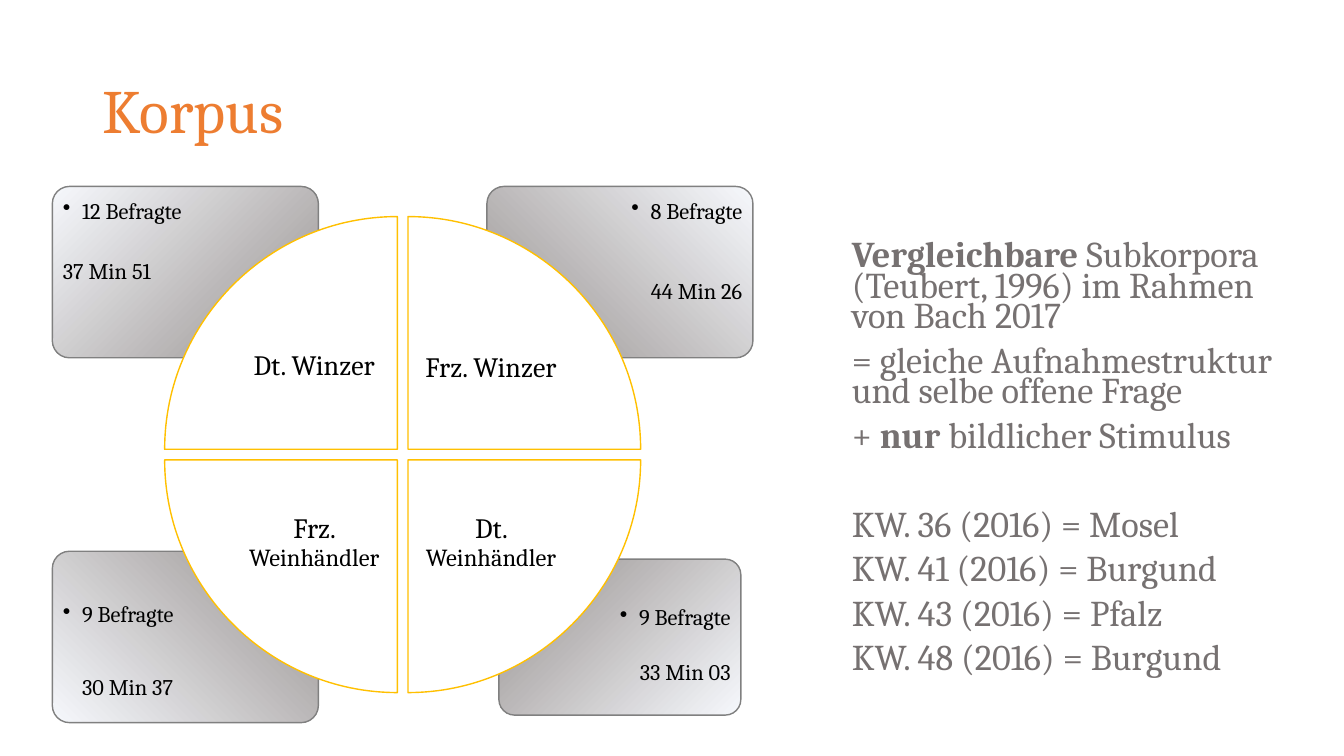
from lxml import etree
from pptx import Presentation
from pptx.dml.color import RGBColor
from pptx.enum.shapes import MSO_SHAPE
from pptx.enum.text import MSO_ANCHOR, MSO_AUTO_SIZE, PP_ALIGN
from pptx.oxml.ns import qn
from pptx.util import Pt

ROUNDED = MSO_SHAPE.ROUNDED_RECTANGLE
TOP, MIDDLE = MSO_ANCHOR.TOP, MSO_ANCHOR.MIDDLE
NO_AUTOFIT = MSO_AUTO_SIZE.NONE
LEFT, CENTER, RIGHT = PP_ALIGN.LEFT, PP_ALIGN.CENTER, PP_ALIGN.RIGHT

FONT = "Cambria"
ORANGE, GOLD, GREY = "ED7D31", "FFC000", "767171"
BLACK, WHITE, EDGE = "000000", "FFFFFF", "808080"
GRADIENT = [(0, "F6F8FC"), (74, "AFABAB"), (83, "A6A6A6"), (100, EDGE)]

WHEEL_X, WHEEL_Y = 287.6, 324.7
RADIUS, HALF_GAP = 166.2, 3.8
ARC_PULL = 0.55
CORNER = 0.1

# side x, side y, (left, top, width, height), gradient angle,
# count, duration, space between them, indent of the duration
BOXES = [
    (1, 1, (356.4, 399.4, 172.8, 111.4), 225, "9 Befragte", "33 Min 03", 22.2, 0),
    (-1, 1, (37.4, 393.8, 190, 122.4), 315, "9 Befragte", "30 Min 37", 34.8, 13.7),
    (1, -1, (347.8, 133.2, 190, 122.4), 135, "8 Befragte", "44 Min 26", 38, 0),
    (-1, -1, (37.4, 133.2, 190, 122.4), 45, "12 Befragte", "37 Min 51", 23.6, 0),
]

# side x, side y, runs of (text, size), line spacing
QUADRANTS = [
    (-1, -1, [("Dt. Winzer", 20)], 0.9),
    (1, -1, [("Frz. Winzer", 20)], 1),
    (1, 1, [("Dt. ", 20), ("Weinhändler", 17.5)], 0.9),
    (-1, 1, [("Frz. ", 20), ("Weinhändler", 17.5)], 0.9),
]

# runs of (text, bold), space before
NOTES = [
    ([("Vergleichbare", True),
      (" Subkorpora (Teubert, 1996) im Rahmen von Bach 2017", False)], 10),
    ([("= gleiche Aufnahmestruktur und selbe offene Frage", False)], 10),
    ([("+ ", False), ("nur ", True), ("bildlicher Stimulus", False)], 10),
    ([("KW. 36 (2016) = Mosel", False)], 41.7),
    ([("KW. 41 (2016) = Burgund", False)], 10),
    ([("KW. 43 (2016) = Pfalz", False)], 10),
    ([("KW. 48 (2016) = Burgund", False)], 10),
]


def color(hex_string):
    return RGBColor.from_string(hex_string)


def add_text(p, text, size=16, fill=BLACK, bold=False):
    r = p.add_run()
    r.text = text
    r.font.name = FONT
    r.font.size = Pt(size)
    r.font.bold = bold
    r.font.color.rgb = color(fill)


def next_paragraph(tf, align=LEFT, spacing=1, before=0):
    """Return the unused first paragraph, or a new one, formatted."""
    p = tf.paragraphs[0] if not tf.paragraphs[0].runs else tf.add_paragraph()
    p.alignment = align
    p.line_spacing = spacing
    p.space_before = Pt(before)
    return p


def set_indent(p, margin, hanging=0, bullet=None):
    pPr = p._p.get_or_add_pPr()
    pPr.set("marL", str(Pt(margin)))
    pPr.set("indent", str(Pt(-hanging)))
    if bullet:
        etree.SubElement(pPr, qn("a:buChar")).set("char", bullet)
    else:
        etree.SubElement(pPr, qn("a:buNone"))


def set_frame(tf, anchor, insets=(7.2, 3.6, 7.2, 3.6)):
    tf.word_wrap = True
    tf.auto_size = NO_AUTOFIT
    tf.vertical_anchor = anchor
    tf.margin_left, tf.margin_top, tf.margin_right, tf.margin_bottom = map(Pt, insets)


def corner_insets(sx, sy, near_x, far_x, near_y, far_y):
    """Insets with the far value on the side that sx and sy point away from."""
    horizontal = (far_x, near_x) if sx > 0 else (near_x, far_x)
    vertical = (far_y, near_y) if sy > 0 else (near_y, far_y)
    return horizontal[0], vertical[0], horizontal[1], vertical[1]


def place(sp, left, top, width, height):
    sp.left, sp.top, sp.width, sp.height = map(Pt, (left, top, width, height))


def set_line(sp, hex_string):
    sp.shadow.inherit = False
    sp.line.color.rgb = color(hex_string)
    sp.line.width = Pt(1)


def set_gradient(sp, angle):
    sp.fill.gradient()
    sp.fill.gradient_angle = 360 - angle
    stops = sp._element.spPr.find(".//" + qn("a:gsLst"))
    for stop in list(stops):
        stops.remove(stop)
    for position, hex_string in GRADIENT:
        stop = etree.SubElement(stops, qn("a:gs"), pos=str(position * 1000))
        etree.SubElement(stop, qn("a:srgbClr"), val=hex_string)


def add_box(s, sx, sy, bounds, angle, count, duration, gap, indent):
    sp = s.shapes.add_shape(ROUNDED, *map(Pt, bounds))
    sp.adjustments[0] = CORNER
    set_gradient(sp, angle)
    set_line(sp, EDGE)
    tf = sp.text_frame
    width, height = bounds[2:]
    set_frame(tf, TOP, corner_insets(sx, sy, 4, width / 3 - 4,
                                     4, height * 0.305 - 3.6))
    align = RIGHT if sx > 0 else LEFT
    spacing = 0.9 if sy > 0 else 1
    p = next_paragraph(tf, align, spacing)
    set_indent(p, 13.7, 13.7, "•")
    add_text(p, count)
    p = next_paragraph(tf, align, spacing, gap)
    set_indent(p, indent)
    add_text(p, duration)


def round_second_side(sp):
    """Turn the side between the two outer points into a quarter circle."""
    first, second = sp._element.findall(".//" + qn("a:lnTo"))[:2]
    (x1, y1), (x2, y2) = [(int(side[0].get("x")), int(side[0].get("y")))
                          for side in (first, second)]
    dx, dy = x2 - x1, y2 - y1
    horizontal_first = y1 == int(sp._element.find(".//" + qn("a:moveTo"))[0].get("y"))
    if horizontal_first:
        controls = [(x1, y1 + dy * ARC_PULL), (x2 - dx * ARC_PULL, y2)]
    else:
        controls = [(x1 + dx * ARC_PULL, y1), (x2, y2 - dy * ARC_PULL)]
    curve = etree.Element(qn("a:cubicBezTo"))
    for x, y in controls + [(x2, y2)]:
        etree.SubElement(curve, qn("a:pt"), x=str(round(x)), y=str(round(y)))
    second.getparent().replace(second, curve)


def add_quadrant(s, sx, sy, runs, spacing):
    x, y = WHEEL_X + sx * HALF_GAP, WHEEL_Y + sy * HALF_GAP
    builder = s.shapes.build_freeform(Pt(x), Pt(y))
    builder.add_line_segments([(Pt(x + sx * RADIUS), Pt(y)),
                               (Pt(x), Pt(y + sy * RADIUS))], close=True)
    sp = builder.convert_to_shape()
    round_second_side(sp)
    sp.fill.solid()
    sp.fill.fore_color.rgb = color(WHITE)
    set_line(sp, GOLD)
    set_frame(sp.text_frame, MIDDLE, corner_insets(sx, sy, 59, 11.5, 59, 11.5))
    p = next_paragraph(sp.text_frame, CENTER, spacing)
    for text, size in runs:
        add_text(p, text, size=size)


def fill_title(s):
    title = s.shapes.title
    place(title, 66, 28.8, 828, 104.4)
    set_frame(title.text_frame, MIDDLE)
    add_text(next_paragraph(title.text_frame, spacing=0.9), "Korpus", size=44, fill=ORANGE)


def fill_notes(s):
    body = s.placeholders[1]
    place(body, 601.2, 157.3, 342.7, 342.7)
    set_frame(body.text_frame, MIDDLE)
    for runs, before in NOTES:
        p = next_paragraph(body.text_frame, spacing=0.7, before=before)
        set_indent(p, 0)
        for text, bold in runs:
            add_text(p, text, size=25.9, fill=GREY, bold=bold)


def main():
    prs = Presentation()
    prs.slide_width, prs.slide_height = Pt(960), Pt(540)
    s = prs.slides.add_slide(prs.slide_layouts[1])
    fill_title(s)
    fill_notes(s)
    for box in BOXES:
        add_box(s, *box)
    for quadrant in QUADRANTS:
        add_quadrant(s, *quadrant)
    prs.save("out.pptx")


if __name__ == "__main__":
    main()
